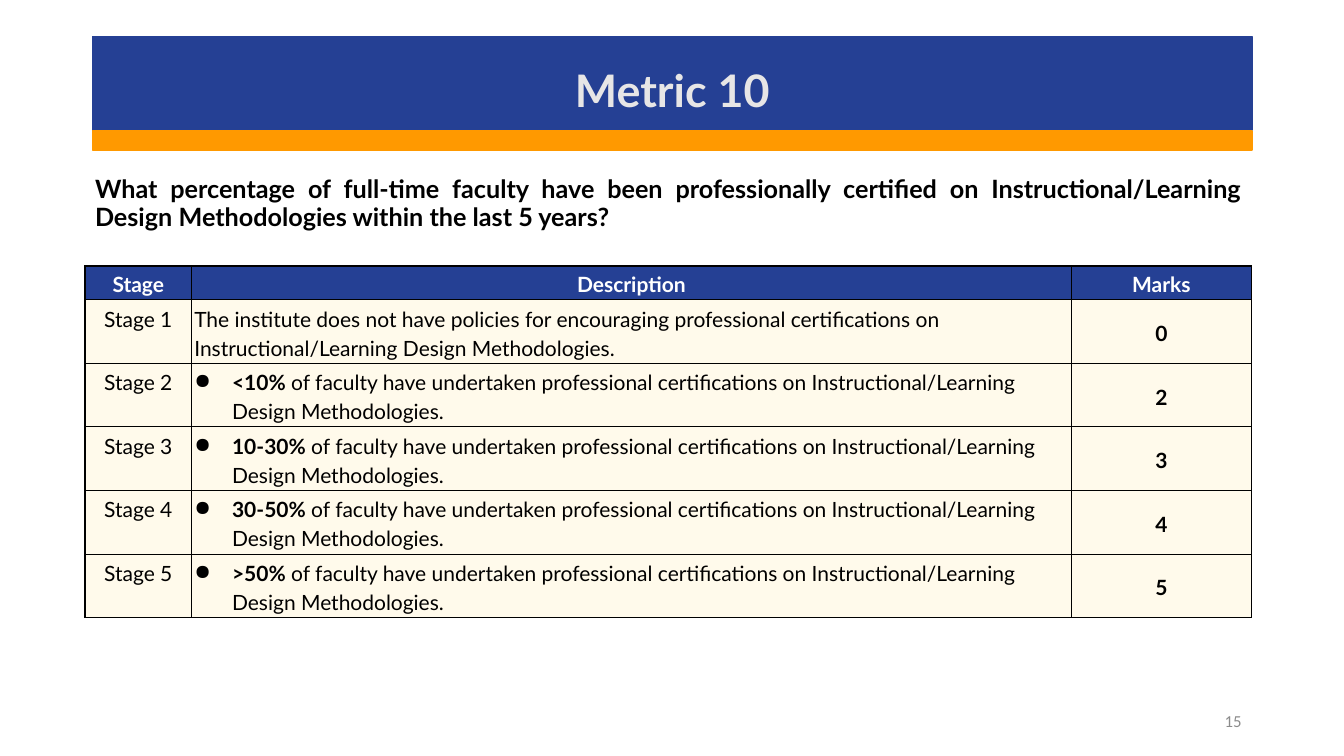
from dataclasses import dataclass

from lxml.etree import SubElement
from pptx import Presentation
from pptx.dml.color import RGBColor
from pptx.enum.shapes import MSO_SHAPE
from pptx.enum.text import MSO_ANCHOR, PP_ALIGN
from pptx.oxml.ns import qn
from pptx.util import Pt

BLUE, ORANGE, CREAM = "254094", "FF9900", "FFFAEB"
BLACK, WHITE, PALE, GREY = "000000", "FFFFFF", "E7E6E6", "8C8C8C"
BULLET_INDENT = 27
THIN, THICK = 0.75, 1.5


@dataclass
class Box:
    left: float
    top: float
    width: float
    height: float

    def points(self) -> list:
        return [Pt(v) for v in (self.left, self.top, self.width, self.height)]


@dataclass
class Stage:
    number: int
    share: str
    description: str
    marks: int


def color(hex_value: str) -> RGBColor:
    return RGBColor.from_string(hex_value)


def write(frame, text: str, *, lead: str = "", size: float = 15, font: str = "Lato",
          ink: str = BLACK, bold: bool = False, align=PP_ALIGN.LEFT,
          spacing: float = 1.0, bullet: bool = False) -> None:
    """Fill the frame with one paragraph, opened by an optional bold lead."""
    paragraph = frame.paragraphs[0]
    if bullet:
        properties = paragraph._p.get_or_add_pPr()
        properties.set("marL", str(Pt(BULLET_INDENT)))
        properties.set("indent", str(-Pt(BULLET_INDENT)))
        SubElement(properties, qn("a:buChar")).set("char", "●")
    paragraph.alignment = align
    paragraph.line_spacing = spacing
    for part, is_bold in ((lead, True), (text, bold)):
        if part:
            run = paragraph.add_run()
            run.text = part
            run.font.size, run.font.name, run.font.bold = Pt(size), font, is_bold
            run.font.color.rgb = color(ink)


def add_band(slide, box: Box, fill: str) -> None:
    band = slide.shapes.add_shape(MSO_SHAPE.RECTANGLE, *box.points())
    band.shadow.inherit = False
    band.fill.solid()
    band.fill.fore_color.rgb = color(fill)
    band.line.color.rgb = color(fill)
    band.line.width = Pt(1)


def add_text(slide, box: Box, text: str, anchor=MSO_ANCHOR.TOP, **text_format) -> None:
    frame = slide.shapes.add_textbox(*box.points()).text_frame
    frame.word_wrap = True
    frame.vertical_anchor = anchor
    write(frame, text, **text_format)


def style_cell(cell, fill: str, anchor, margin: float, borders: dict[str, float]) -> None:
    properties = cell._tc.get_or_add_tcPr()
    for side, width in borders.items():
        line = SubElement(properties, qn(f"a:ln{side}"), w=str(Pt(width)))
        SubElement(SubElement(line, qn("a:solidFill")), qn("a:srgbClr"), val=BLACK)
    cell.fill.solid()
    cell.fill.fore_color.rgb = color(fill)
    cell.vertical_anchor = anchor
    cell.margin_left = cell.margin_right = Pt(margin)
    cell.margin_top = cell.margin_bottom = Pt(margin)


def add_stage_table(slide, box: Box, widths: list[float], header_height: float,
                    headings: list[str], stages: list[Stage]) -> None:
    table = slide.shapes.add_table(len(stages) + 1, len(headings), *box.points()).table
    for column, width in zip(table.columns, widths):
        column.width = Pt(width)
    stage_height = (box.height - header_height) / len(stages)
    for index, row in enumerate(table.rows):
        row.height = Pt(stage_height if index else header_height)

    def fill_cell(row: int, column: int, text: str, fill: str, anchor,
                  margin: float, **text_format) -> None:
        cell = table.cell(row, column)
        borders = {"L": THIN if column else THICK, "R": THIN,
                   "T": THIN if row else THICK,
                   "B": THICK if row == len(stages) else THIN}
        style_cell(cell, fill, anchor, margin, borders)
        write(cell.text_frame, text, spacing=1.15, **text_format)

    # Header row
    for column, heading in enumerate(headings):
        fill_cell(0, column, heading, BLUE, MSO_ANCHOR.MIDDLE, 1.5,
                  ink=WHITE, bold=True, align=PP_ALIGN.CENTER)

    # Stage rows
    for row, stage in enumerate(stages, start=1):
        fill_cell(row, 0, f"Stage {stage.number}", CREAM, MSO_ANCHOR.TOP, 2,
                  align=PP_ALIGN.CENTER)
        fill_cell(row, 1, stage.description, CREAM, MSO_ANCHOR.BOTTOM, 2,
                  lead=stage.share, bullet=bool(stage.share))
        fill_cell(row, 2, str(stage.marks), CREAM, MSO_ANCHOR.MIDDLE, 1.5,
                  bold=True, align=PP_ALIGN.CENTER)


def main() -> None:
    presentation = Presentation()
    presentation.slide_width, presentation.slide_height = Pt(960), Pt(540)
    slide = presentation.slides.add_slide(presentation.slide_layouts[6])

    # Title banner
    add_band(slide, Box(66.24, 26, 828, 67), BLUE)
    add_band(slide, Box(66.24, 93.5, 828, 13.7), ORANGE)
    add_text(slide, Box(66.24, 27.4, 828, 59.8), "Metric 10", MSO_ANCHOR.BOTTOM,
             size=32, ink=PALE, bold=True, align=PP_ALIGN.CENTER, spacing=0.9)

    # Question
    add_text(slide, Box(60.8, 123, 833, 60),
             "What percentage of full-time faculty have been professionally certified on "
             "Instructional/Learning Design Methodologies within the last 5 years?",
             size=18, bold=True, align=PP_ALIGN.JUSTIFY, spacing=0.9)

    # Stages and marks
    certified = (" of faculty have undertaken professional certifications on "
                 "Instructional/Learning Design Methodologies.")
    stages = [
        Stage(1, "", "The institute does not have policies for encouraging professional "
              "certifications on Instructional/Learning Design Methodologies.", 0),
        Stage(2, "<10%", certified, 2),
        Stage(3, "10-30%", certified, 3),
        Stage(4, "30-50%", certified, 4),
        Stage(5, ">50%", certified, 5),
    ]
    add_stage_table(slide, Box(60.8, 190, 833, 250.7), [76, 628.5, 128.5], 24.2,
                    ["Stage", "Description", "Marks"], stages)

    # Slide number
    add_text(slide, Box(678, 500.5, 216, 28.8), "15", MSO_ANCHOR.MIDDLE,
             size=12, font="Calibri", ink=GREY, align=PP_ALIGN.RIGHT)

    presentation.save("out.pptx")


if __name__ == "__main__":
    main()
